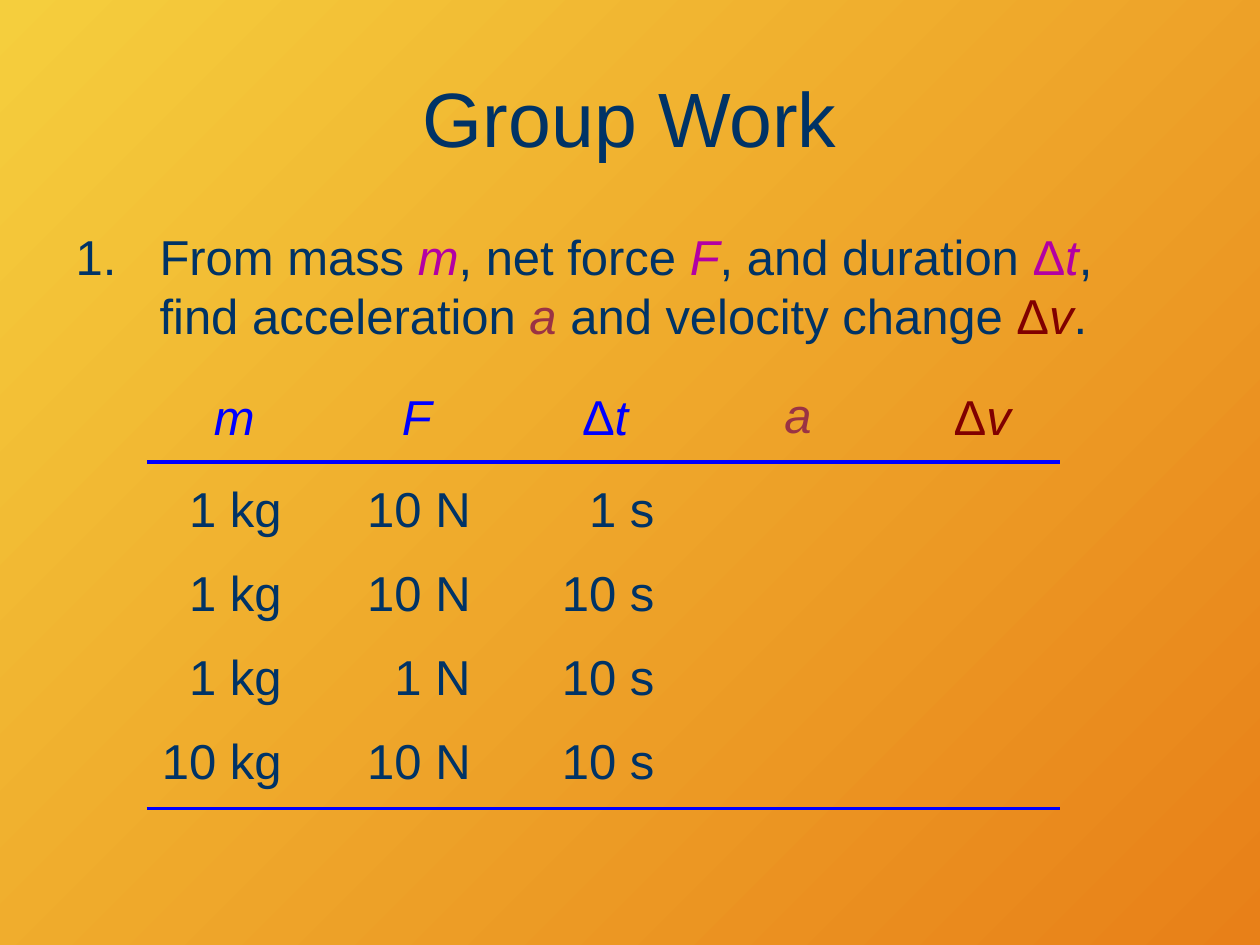
from lxml import etree
from pptx import Presentation, util as u
from pptx.dml.color import RGBColor
from pptx.enum import shapes, text
from pptx.oxml.ns import qn

NAVY = RGBColor(0x00, 0x33, 0x66)
BLUE = RGBColor(0x00, 0x00, 0xFF)
PURPLE = RGBColor(0xB3, 0x00, 0xA4)
ROSE = RGBColor(0x9A, 0x33, 0x44)
MAROON = RGBColor(0x80, 0x00, 0x00)
YELLOW = RGBColor(0xF5, 0xCE, 0x3D)
ORANGE = RGBColor(0xE8, 0x80, 0x18)

CELL = u.Inches(1) / 24  # the slide is a grid of 240 columns by 180 rows
BOX_ROWS = 13.7
LEFT, CENTER, RIGHT = text.PP_ALIGN.LEFT, text.PP_ALIGN.CENTER, text.PP_ALIGN.RIGHT


def grid(*cells):
    return [u.Emu(round(n * CELL)) for n in cells]


class Slide:
    font = "Arial"
    size = u.Pt(28)

    def __init__(self, prs):
        self.s = prs.slides.add_slide(prs.slide_layouts[1])
        self.group = self.s.shapes.add_group_shape()

    def background(self, start, end, angle):
        fill = self.s.background.fill
        fill.gradient()
        fill.gradient_angle = angle
        for stop, color in zip(fill.gradient_stops, (start, end)):
            stop.color.rgb = color

    def add_runs(self, p, pieces, size=None):
        """Add runs given as (text, colour, italic)."""
        for words, color, italic in pieces:
            r = p.add_run()
            r.text = words
            r.font.name, r.font.size = self.font, size or self.size
            r.font.color.rgb, r.font.italic = color, italic

    def place(self, sp, x, y, w, h):
        sp.left, sp.top, sp.width, sp.height = grid(x, y, w, h)
        return sp.text_frame

    def title(self, words, *box):
        tf = self.place(self.s.shapes.title, *box)
        tf.vertical_anchor = text.MSO_ANCHOR.MIDDLE
        p = tf.paragraphs[0]
        p.alignment = CENTER
        self.add_runs(p, [(words, NAVY, False)], u.Pt(44))

    def numbered(self, pieces, *box):
        p = self.place(self.s.placeholders[1], *box).paragraphs[0]
        indent = grid(16)[0]
        pPr = p._p.get_or_add_pPr()
        pPr.set("marL", str(indent))
        pPr.set("indent", str(-indent))
        etree.SubElement(pPr, qn("a:buFont")).set("typeface", "+mj-lt")
        etree.SubElement(pPr, qn("a:buAutoNum")).set("type", "arabicPeriod")
        self.add_runs(p, pieces)

    def label(self, pieces, x, y, w, align):
        sp = self.group.shapes.add_textbox(*grid(x, y, w, BOX_ROWS))
        tf = sp.text_frame
        tf.word_wrap = True
        tf.auto_size = text.MSO_AUTO_SIZE.SHAPE_TO_FIT_TEXT
        p = tf.paragraphs[0]
        p.alignment = align
        self.add_runs(p, pieces)

    def rule(self, x1, x2, y):
        line = self.group.shapes.add_connector(
            shapes.MSO_CONNECTOR.STRAIGHT, *grid(x1, y, x2, y))
        line.line.color.rgb = BLUE
        line.line.width = u.Pt(2.25)
        etree.SubElement(line._element.spPr, qn("a:effectLst"))


def main():
    prs = Presentation()
    prs.slide_width, prs.slide_height = grid(240, 180)
    slide = Slide(prs)
    slide.background(YELLOW, ORANGE, 315)
    slide.title("Group Work", 12, 7.2, 216, 30)
    slide.numbered([
        ("From mass ", NAVY, False), ("m", PURPLE, True),
        (", net force ", NAVY, False), ("F", PURPLE, True),
        (", and duration ", NAVY, False), ("Δ", PURPLE, False),
        ("t", PURPLE, True), (", find acceleration ", NAVY, False),
        ("a", ROSE, True), (" and velocity change ", NAVY, False),
        ("Δ", MAROON, False), ("v", MAROON, True), (".", NAVY, False),
    ], 12, 42, 216, 30)

    headers = [
        ([("m", BLUE, True)], 38.4, 72.5, 16.5, LEFT),
        ([("F", BLUE, True)], 74.2, 72.5, 16.5, LEFT),
        ([("Δ", BLUE, False), ("t", BLUE, True)], 108.5, 72.5, 18.7, LEFT),
        ([("a", ROSE, True)], 146, 72, 12, CENTER),
        ([("Δ", MAROON, False), ("v", MAROON, True)], 179.3, 72.5, 18.7, LEFT),
    ]
    for header in headers:
        slide.label(*header)

    columns = [(28, 28), (65, 27), (102, 25)]  # left edge, width
    rows = [
        ("1 kg", "10 N", "1 s"),
        ("1 kg", "10 N", "10 s"),
        ("1 kg", "1 N", "10 s"),
        ("10 kg", "10 N", "10 s"),
    ]
    for i, row in enumerate(rows):
        for words, (x, w) in zip(row, columns):
            slide.label([(words, NAVY, False)], x, 90 + 16 * i, w, RIGHT)

    for y in (88, 154):
        slide.rule(28, 202, y)
    prs.save("out.pptx")


if __name__ == "__main__":
    main()
